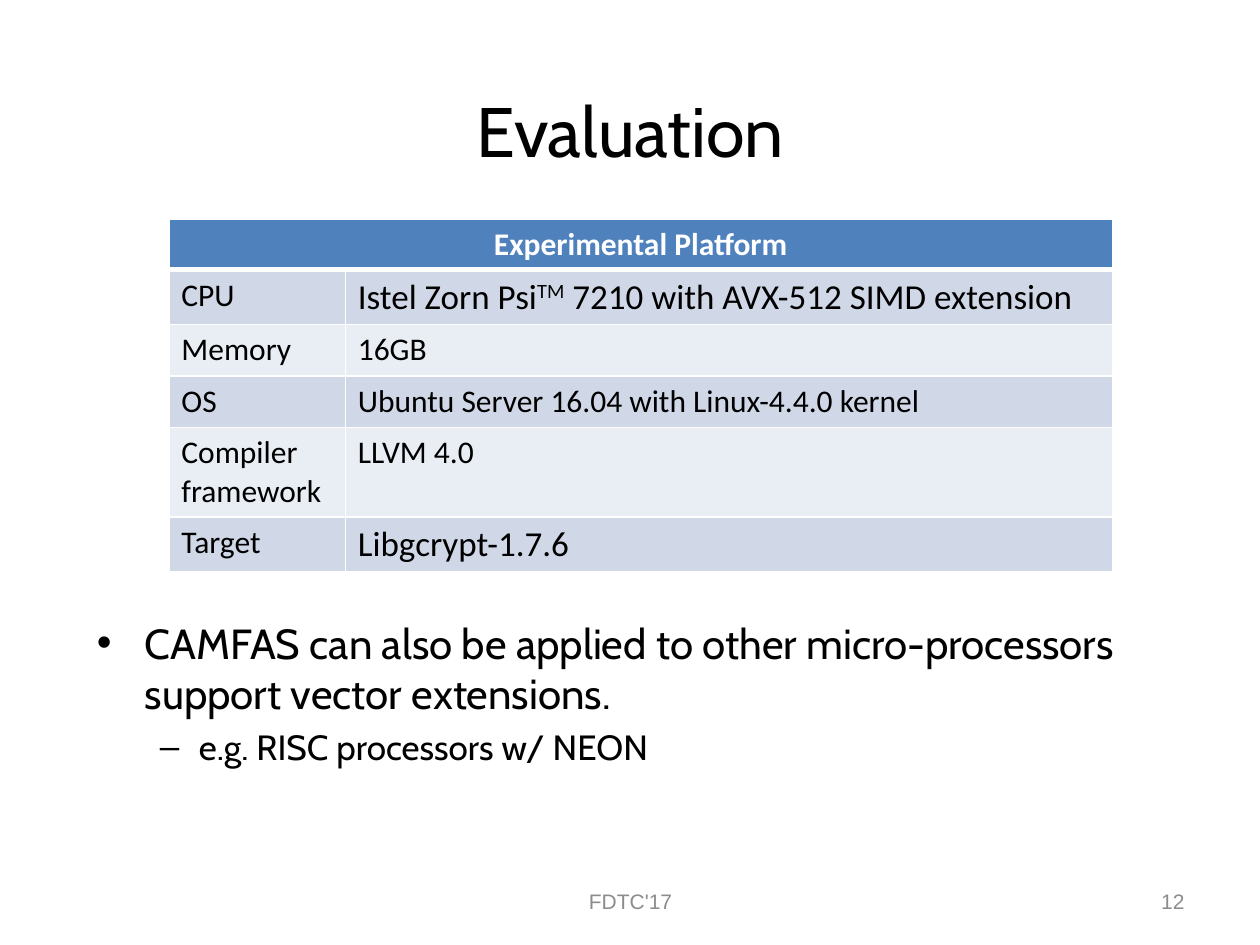
from dataclasses import dataclass

from lxml import etree
from pptx import Presentation
from pptx.dml.color import RGBColor
from pptx.enum.text import MSO_ANCHOR, PP_ALIGN
from pptx.oxml.ns import qn
from pptx.util import Inches, Pt

MID, RIGHT = PP_ALIGN.CENTER, PP_ALIGN.RIGHT
TOP, CENTER = MSO_ANCHOR.TOP, MSO_ANCHOR.MIDDLE


@dataclass(frozen=True)
class Theme:
    """Colours, fonts and type sizes of the deck."""
    ink: str = "000000"
    paper: str = "FFFFFF"
    gray: str = "8C8C8C"
    head: str = "4F81BD"
    bands: tuple = ("D0D8E8", "E9EDF4")
    main: str = "Cabin"
    grid: str = "Calibri"
    foot: str = "Arial"
    title: int = 40
    body: int = 24
    sub: int = 20
    cell: int = 18
    note: int = 12


THEME = Theme()
ROWS = [
    ("CPU", [("Istel Zorn Psi", 0), ("TM", 30), (" 7210 with AVX-512 SIMD extension", 0)],
     THEME.sub, 0.43),
    ("Memory", [("16GB", 0)], THEME.cell, 0.41),
    ("OS", [("Ubuntu Server 16.04 with Linux-4.4.0 kernel", 0)], THEME.cell, 0.41),
    ("Compiler framework", [("LLVM 4.0", 0)], THEME.cell, 0.71),
    ("Target", [("Libgcrypt-1.7.6", 0)], THEME.sub, 0.43),
]
POINTS = [
    ("CAMFAS can also be applied to other micro-processors support vector extensions.",
     "•", THEME.body, 0, 0.38, 0.38),
    ("e.g. RISC processors w/ NEON", "–", THEME.sub, 1, 0.81, 0.31),
]


def add_run(para, text, font, size, color=THEME.ink, bold=False, lift=0):
    """Add one styled run, raised by lift percent."""
    run = para.add_run()
    run.text = text
    run.font.name, run.font.size, run.font.bold = font, Pt(size), bold
    run.font.color.rgb = RGBColor.from_string(color)
    if lift:
        run.font._element.set("baseline", str(lift * 1000))


def add_frame(slide, box, anchor):
    """Add a wrapping text box and return its frame."""
    frame = slide.shapes.add_textbox(*map(Inches, box)).text_frame
    frame.word_wrap, frame.vertical_anchor = True, anchor
    return frame


def add_line(slide, box, text, font, size, color, align):
    """Place a single line of text in the middle of the box."""
    para = add_frame(slide, box, CENTER).paragraphs[0]
    para.alignment = align
    add_run(para, text, font, size, color)


def add_list(slide, box, points):
    """Place the bulleted points in the box."""
    frame = add_frame(slide, box, TOP)
    for i, (text, mark, size, level, left, hang) in enumerate(points):
        para = frame.add_paragraph() if i else frame.paragraphs[0]
        para.level = level
        props = para._p.get_or_add_pPr()
        props.set("marL", str(Inches(left)))
        props.set("indent", str(-Inches(hang)))
        if i:
            para.space_before = Pt(size * 0.2)
        etree.SubElement(props, qn("a:buFont"), typeface=THEME.foot)
        etree.SubElement(props, qn("a:buChar"), char=mark)
        add_run(para, text, THEME.main, size)


def style_cell(cell, fill, base=1):
    """Give a cell its white borders and its fill."""
    props = cell._tc.get_or_add_tcPr()
    for side, width in zip("LRTB", (1, 1, 1, base)):
        line = etree.SubElement(props, qn(f"a:ln{side}"), w=str(Pt(width)))
        solid = etree.SubElement(line, qn("a:solidFill"))
        etree.SubElement(solid, qn("a:srgbClr"), val=THEME.paper)
    cell.fill.solid()
    cell.fill.fore_color.rgb = RGBColor.from_string(fill)


def add_grid(slide, box, title, rows):
    """Place the platform table under one merged heading."""
    table = slide.shapes.add_table(len(rows) + 1, 2, *map(Inches, box)).table
    first = 1.4
    for col, width in zip(table.columns, (first, box[2] - first)):
        col.width = Inches(width)
    table.rows[0].height = Inches(0.4)
    for cell in table.rows[0].cells:
        style_cell(cell, THEME.head, 3)
    top = table.cell(0, 0)
    top.merge(table.cell(0, 1))
    para = top.text_frame.paragraphs[0]
    para.alignment = MID
    add_run(para, title, THEME.grid, THEME.cell, THEME.paper, True)
    for i, (label, parts, size, height) in enumerate(rows):
        row = table.rows[i + 1]
        row.height = Inches(height)
        for cell in row.cells:
            style_cell(cell, THEME.bands[i % 2])
        name, value = (cell.text_frame.paragraphs[0] for cell in row.cells)
        add_run(name, label, THEME.grid, THEME.cell)
        for text, lift in parts:
            add_run(value, text, THEME.grid, size, lift=lift)


def main():
    """Build the evaluation slide and save it."""
    deck = Presentation()
    deck.slide_width, deck.slide_height = Inches(10), Inches(7.5)
    slide = deck.slides.add_slide(deck.slide_layouts[6])
    add_line(slide, (3.42, 6.95, 3.17, 0.4), "FDTC'17", THEME.foot, THEME.note, THEME.gray, MID)
    add_line(slide, (7.17, 6.95, 2.33, 0.4), "12", THEME.foot, THEME.note, THEME.gray, RIGHT)
    add_line(slide, (0.5, 0.4, 9, 1.25), "Evaluation", THEME.main, THEME.title, THEME.ink, MID)
    add_list(slide, (0.67, 4.85, 8.83, 2.28), POINTS)
    add_grid(slide, (1.34, 1.74, 7.49, 2.78), "Experimental Platform", ROWS)
    deck.save("out.pptx")


if __name__ == "__main__":
    main()
